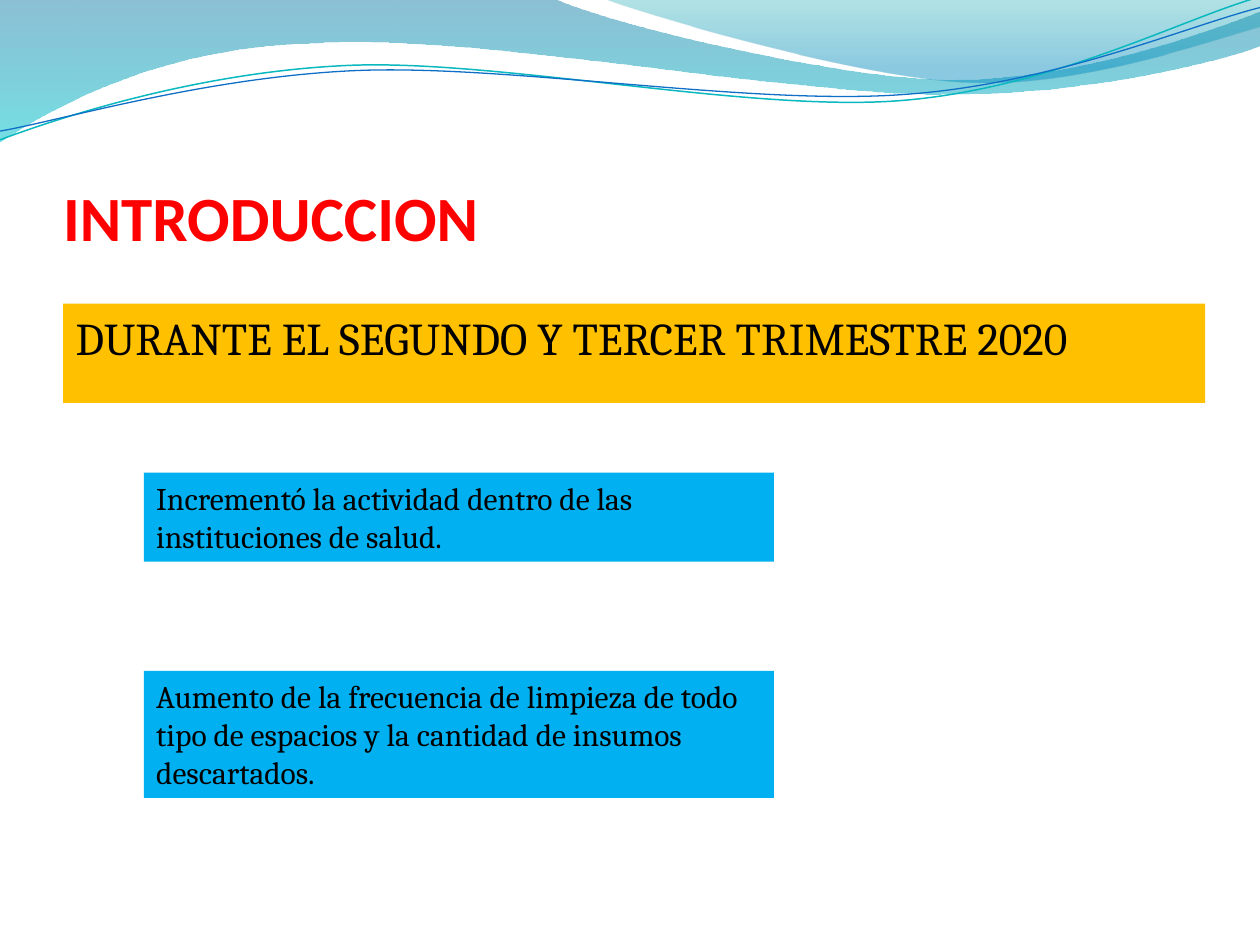
from dataclasses import dataclass

from lxml import etree
from pptx import Presentation
from pptx.dml.color import RGBColor
from pptx.enum import shapes, text
from pptx.oxml.ns import qn
from pptx.util import Pt

BLACK = "000000"


@dataclass
class Wave:
    """Outline in points; a segment holds one point (line) or three (Bézier curve)."""
    start: tuple
    segments: list
    gradient: tuple = ()  # (position, colour, opacity in percent) from top to bottom
    line_color: str = ""
    line_width: float = 0


@dataclass
class Box:
    left: float
    top: float
    width: float
    height: float


@dataclass
class Note:
    box: Box
    content: str


WAVES = [
    Wave((0, 0), [
        [(316.8, -0.7)],
        [(342.7, 12.2), (478.1, 45.4), (545.8, 45.4)],
        [(614.2, 45.4), (689.8, 18.7), (720, 6.5)],
        [(720.7, 25.9)],
        [(707.8, 31.7), (626.4, 54.7), (537.1, 54)],
        [(447.8, 54), (275, 20.2), (185, 24.5)],
        [(92.9, 25.9), (33.1, 59.8), (-0.7, 81.4)],
        [(0, 0)],
    ], gradient=((0, "0074A1", 45), (1, "00C6CF", 55))),
    Wave((344.9, -0.7), [
        [(366.5, 7.9), (491, 44.6), (553.7, 46.8)],
        [(616.3, 49.7), (691.9, 23), (720, 15.1)],
        [(720, 0)],
        [(344.9, -0.7)],
    ], gradient=((0, "00A1A9", 30), (0.8, "008BBF", 45))),
    Wave((0, 79.9), [
        [(34.6, 67), (113.8, 41), (199.4, 37.4)],
        [(284.4, 33.8), (427, 64.1), (513.4, 57.6)],
        [(599.8, 51.1), (675.4, 10.8), (718.6, -1.4)],
    ], line_color="0AB8BF", line_width=0.85),
    Wave((0, 74.9), [
        [(33.8, 69.1), (118.1, 43.9), (203.8, 40.3)],
        [(290.2, 36.7), (429.8, 60.5), (516.2, 54)],
        [(601.9, 48.2), (677.5, 15.1), (720, 4.3)],
    ], line_color="0F6FC6", line_width=0.75),
]

NOTES = [
    Note(Box(82.2, 270, 360, 51),
         "Incrementó la actividad dentro de las instituciones de salud."),
    Note(Box(82.2, 383.3, 360, 72.7),
         "Aumento de la frecuencia de limpieza de todo tipo de espacios "
         "y la cantidad de insumos descartados."),
]


def color(value: str) -> RGBColor:
    return RGBColor.from_string(value)


def bend_segments(shape, segments: list) -> None:
    """Turn the straight segments that have control points into Bézier curves."""
    lines = list(shape._element.iter(qn("a:lnTo")))
    for line, segment in zip(lines, segments):
        if len(segment) == 1:
            continue
        curve = etree.Element(qn("a:cubicBezTo"))
        for x, y in segment:
            etree.SubElement(curve, qn("a:pt"),
                             x=str(Pt(x) - shape.left), y=str(Pt(y) - shape.top))
        line.getparent().replace(line, curve)


def draw_wave(slide, wave: Wave) -> None:
    anchors = [(Pt(x), Pt(y)) for x, y in
               [wave.start] + [segment[-1] for segment in wave.segments]]
    builder = slide.shapes.build_freeform(*anchors[0])
    builder.add_line_segments(anchors[1:], close=bool(wave.gradient))
    shape = builder.convert_to_shape()
    bend_segments(shape, wave.segments)
    shape.shadow.inherit = False
    if wave.gradient:
        shape.line.fill.background()
        shape.fill.gradient()
        shape.fill.gradient_angle = 270
        for stop, (position, value, _) in zip(shape.fill.gradient_stops, wave.gradient):
            stop.position = position
            stop.color.rgb = color(value)
        stop_colors = shape._element.iter(qn("a:srgbClr"))
        for element, (_, _, opacity) in zip(stop_colors, wave.gradient):
            etree.SubElement(element, qn("a:alpha"), val=str(opacity * 1000))
    else:
        shape.fill.background()
        shape.line.color.rgb = color(wave.line_color)
        shape.line.width = Pt(wave.line_width)


def place(shape, box: Box) -> None:
    shape.left, shape.top = Pt(box.left), Pt(box.top)
    shape.width, shape.height = Pt(box.width), Pt(box.height)


def write(shape, content: str, font_name: str, size: float, font_color: str,
          bold: bool = False, anchor=text.MSO_ANCHOR.TOP):
    frame = shape.text_frame
    frame.text = content
    frame.word_wrap = True
    frame.auto_size = text.MSO_AUTO_SIZE.NONE
    frame.vertical_anchor = anchor
    paragraph = frame.paragraphs[0]
    paragraph.alignment = text.PP_ALIGN.LEFT
    font = paragraph.runs[0].font
    font.name, font.size, font.bold = font_name, Pt(size), bold
    font.color.rgb = color(font_color)
    return paragraph


def fill_solid(shape, value: str) -> None:
    shape.fill.solid()
    shape.fill.fore_color.rgb = color(value)
    shape.line.fill.background()


def draw_title(shape) -> None:
    place(shape, Box(36, 55.5, 648, 90))
    write(shape, "INTRODUCCION", "Calibri", 36, "FF0000", True, text.MSO_ANCHOR.BOTTOM)
    frame = shape.text_frame
    frame.margin_left = frame.margin_right = frame.margin_bottom = 0


def draw_banner(shape) -> None:
    place(shape, Box(36, 173.5, 652.7, 56.7))
    fill_solid(shape, "FFC000")
    paragraph = write(shape, "DURANTE EL SEGUNDO Y TERCER TRIMESTRE 2020",
                      "Cambria", 26, BLACK)
    paragraph.space_before = Pt(5.2)
    properties = paragraph._p.get_or_add_pPr()
    properties.set("marL", "0")
    properties.set("indent", "0")
    etree.SubElement(properties, qn("a:buNone"))


def draw_note(slide, note: Note) -> None:
    shape = slide.shapes.add_shape(shapes.MSO_SHAPE.RECTANGLE, 0, 0, 0, 0)
    place(shape, note.box)
    shape.shadow.inherit = False
    fill_solid(shape, "00B0F0")
    write(shape, note.content, "Cambria", 18, BLACK)
    shape.text_frame.auto_size = text.MSO_AUTO_SIZE.SHAPE_TO_FIT_TEXT


def main() -> None:
    presentation = Presentation()
    presentation.slide_width, presentation.slide_height = Pt(720), Pt(540)
    slide = presentation.slides.add_slide(presentation.slide_layouts[1])
    title, banner = slide.placeholders
    for wave in WAVES:
        draw_wave(slide, wave)
    for placeholder in (title, banner):  # bring in front of the waves
        slide.shapes._spTree.append(placeholder._element)
    draw_title(title)
    draw_banner(banner)
    for note in NOTES:
        draw_note(slide, note)
    presentation.save("out.pptx")


if __name__ == "__main__":
    main()
